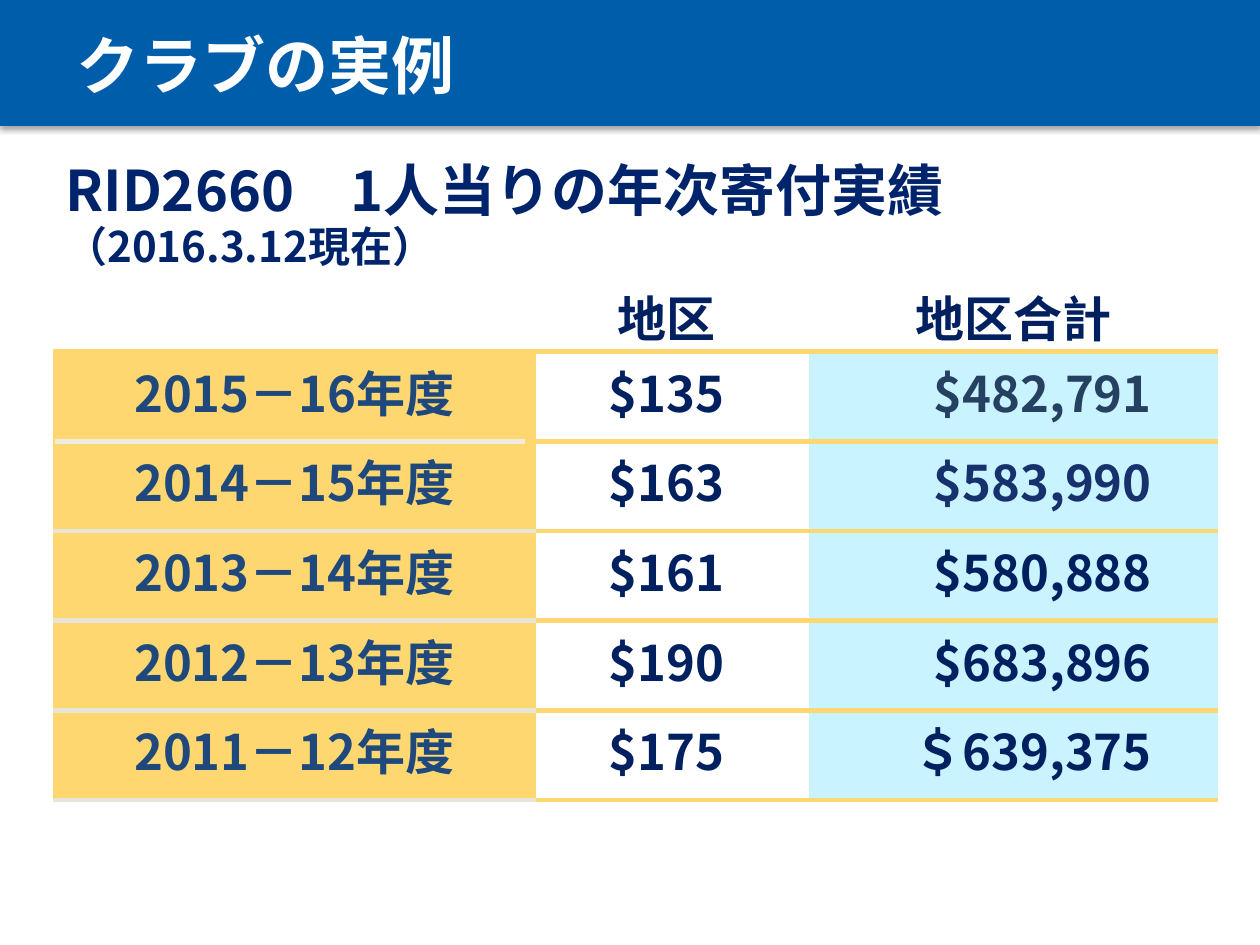
from lxml import etree
from pptx import Presentation
from pptx.dml.color import RGBColor
from pptx.enum.shapes import MSO_CONNECTOR, MSO_SHAPE
from pptx.enum.text import MSO_ANCHOR, PP_ALIGN
from pptx.oxml.ns import qn
from pptx.util import Inches, Pt

STRAIGHT = MSO_CONNECTOR.STRAIGHT
RECTANGLE = MSO_SHAPE.RECTANGLE
TOP, MIDDLE, BOTTOM = MSO_ANCHOR.TOP, MSO_ANCHOR.MIDDLE, MSO_ANCHOR.BOTTOM
LEFT, CENTER, RIGHT = PP_ALIGN.LEFT, PP_ALIGN.CENTER, PP_ALIGN.RIGHT

FONT = "Noto Sans CJK JP"
COLORS = {
    "banner": "005DAA", "white": "FFFFFF", "heading": "00246C",
    "navy": "002060", "year": "1F497D", "latest": "254061",
    "previous": "16316B", "yellow": "FED770", "cyan": "C8F3FF",
    "gray": "E6E5D8", "divider": "EEECE1", "shadow": "000000",
}
HEADERS = ["", "地区", "地区合計"]
RECORDS = [
    ("2015－16年度", "$135", "$482,791", "latest"),
    ("2014－15年度", "$163", "$583,990", "previous"),
    ("2013－14年度", "$161", "$580,888", "navy"),
    ("2012－13年度", "$190", "$683,896", "navy"),
    ("2011－12年度", "$175", "＄639,375", "navy"),
]
COLUMN_WIDTHS = [3.83, 2.17, 3.25]
COLUMN_FILLS = ["yellow", None, "cyan"]
COLUMN_ALIGNS = [CENTER, CENTER, RIGHT]
HEADER_MARGINS = [(0, 0, 0, 0), (0, 0, 0.09, 0), (0.09, 0, 0.09, 0)]
BODY_MARGINS = [(0.12, 0.05, 0.12, 0.05), (0, 0, 0.09, 0), (0.09, 0, 0.53, 0)]


def rgb(name):
    return RGBColor.from_string(COLORS[name])


def style_paragraph(para, size, color, align=LEFT):
    para.alignment = align
    font = para.font
    font.size = Pt(size)
    font.bold = True
    font.name = FONT
    font.color.rgb = rgb(color)
    properties = para._p.pPr.find(qn("a:defRPr"))
    etree.SubElement(properties, qn("a:ea"), typeface=FONT)


def set_margins(target, margins):
    left, top, right, bottom = (Inches(value) for value in margins)
    target.margin_left, target.margin_top = left, top
    target.margin_right, target.margin_bottom = right, bottom


def add_text(page, box, lines, color, spacing, margins):
    frame = page.shapes.add_textbox(*map(Inches, box)).text_frame
    frame.word_wrap = True
    frame.vertical_anchor = TOP
    set_margins(frame, margins)
    for index, (text, size) in enumerate(lines):
        para = frame.paragraphs[0] if index == 0 else frame.add_paragraph()
        para.text = text
        para.line_spacing = spacing
        if index:
            para.space_before = Pt(2.5)
        style_paragraph(para, size, color)


def add_banner(page, box):
    left, top, width, height = box
    banner = page.shapes.add_shape(RECTANGLE, *map(Inches, box))
    banner.fill.solid()
    banner.fill.fore_color.rgb = rgb("banner")
    banner.line.fill.background()
    banner.shadow.inherit = False
    effects = banner._element.spPr.find(qn("a:effectLst"))
    shadow = etree.SubElement(
        effects, qn("a:outerShdw"), blurRad=str(Pt(3.1)), dist=str(Pt(1.8)),
        dir="5400000", algn="t", rotWithShape="0")
    tone = etree.SubElement(shadow, qn("a:srgbClr"), val=COLORS["shadow"])
    etree.SubElement(tone, qn("a:alpha"), val="35000")
    add_text(page, (left + 0.51, top + 0.24, width - 1.92, height - 0.47),
             [("クラブの実例", 36)], "white", 0.9, (0.1, 0.04, 0.1, 0))


def edge_color(boundary, column):
    if boundary == 0:
        return None
    return "gray" if column == 0 and boundary > 2 else "yellow"


def set_borders(cell, row, column):
    properties = cell._tc.get_or_add_tcPr()
    edges = {"L": None, "R": None,
             "T": edge_color(row, column), "B": edge_color(row + 1, column)}
    for side, color in edges.items():
        line = etree.SubElement(properties, qn(f"a:ln{side}"), w=str(Pt(3)))
        if color:
            fill = etree.SubElement(line, qn("a:solidFill"))
            etree.SubElement(fill, qn("a:srgbClr"), val=COLORS[color])
        else:
            etree.SubElement(line, qn("a:noFill"))


def fill_cell(cell, text, color, fill, align, anchor, margins):
    if fill:
        cell.fill.solid()
        cell.fill.fore_color.rgb = rgb(fill)
    else:
        cell.fill.background()
    set_margins(cell, margins)
    cell.vertical_anchor = anchor
    para = cell.text_frame.paragraphs[0]
    para.text = text
    if anchor == MIDDLE:
        para.line_spacing = Pt(34)
    style_paragraph(para, 28, color, align)


def add_donation_table(page, box):
    left, top, width, height = box
    row_count = len(RECORDS) + 1
    row_height = height / row_count
    table = page.shapes.add_table(
        row_count, len(HEADERS), *map(Inches, box)).table
    table.first_row = False
    table.horz_banding = False
    for column, column_width in zip(table.columns, COLUMN_WIDTHS):
        column.width = Inches(column_width)
    for row in table.rows:
        row.height = Inches(row_height)
    for column, header in enumerate(HEADERS):
        cell = table.cell(0, column)
        set_borders(cell, 0, column)
        fill_cell(cell, header, "navy", None, CENTER, BOTTOM,
                  HEADER_MARGINS[column])
    for row, (*texts, total_color) in enumerate(RECORDS, 1):
        colors = ["year", "navy", total_color]
        for column, text in enumerate(texts):
            cell = table.cell(row, column)
            set_borders(cell, row, column)
            fill_cell(cell, text, colors[column], COLUMN_FILLS[column],
                      COLUMN_ALIGNS[column], MIDDLE, BODY_MARGINS[column])
    divider_y = Inches(top + 2 * row_height)
    divider = page.shapes.add_connector(
        STRAIGHT, Inches(left + 3.75), divider_y, Inches(left + 0.02), divider_y)
    divider.line.color.rgb = rgb("divider")
    divider.line.width = Pt(2.5)
    etree.SubElement(divider._element.spPr, qn("a:effectLst"))


def main():
    deck = Presentation()
    deck.slide_width, deck.slide_height = Inches(10), Inches(7.5)
    page = deck.slides.add_slide(deck.slide_layouts[6])
    add_banner(page, (0, 0, 10, 1))
    add_text(page, (0.42, 1.25, 9.42, 1.08),
             [("RID2660\u30001人当りの年次寄付実績".replace("\u3000", "　"), 32),
              ("（2016.3.12現在）", 24)],
             "heading", 0.88, (0.1, 0.05, 0.1, 0.05))
    add_donation_table(page, (0.42, 2.08, 9.25, 4.27))
    deck.save("out.pptx")


if __name__ == "__main__":
    main()
